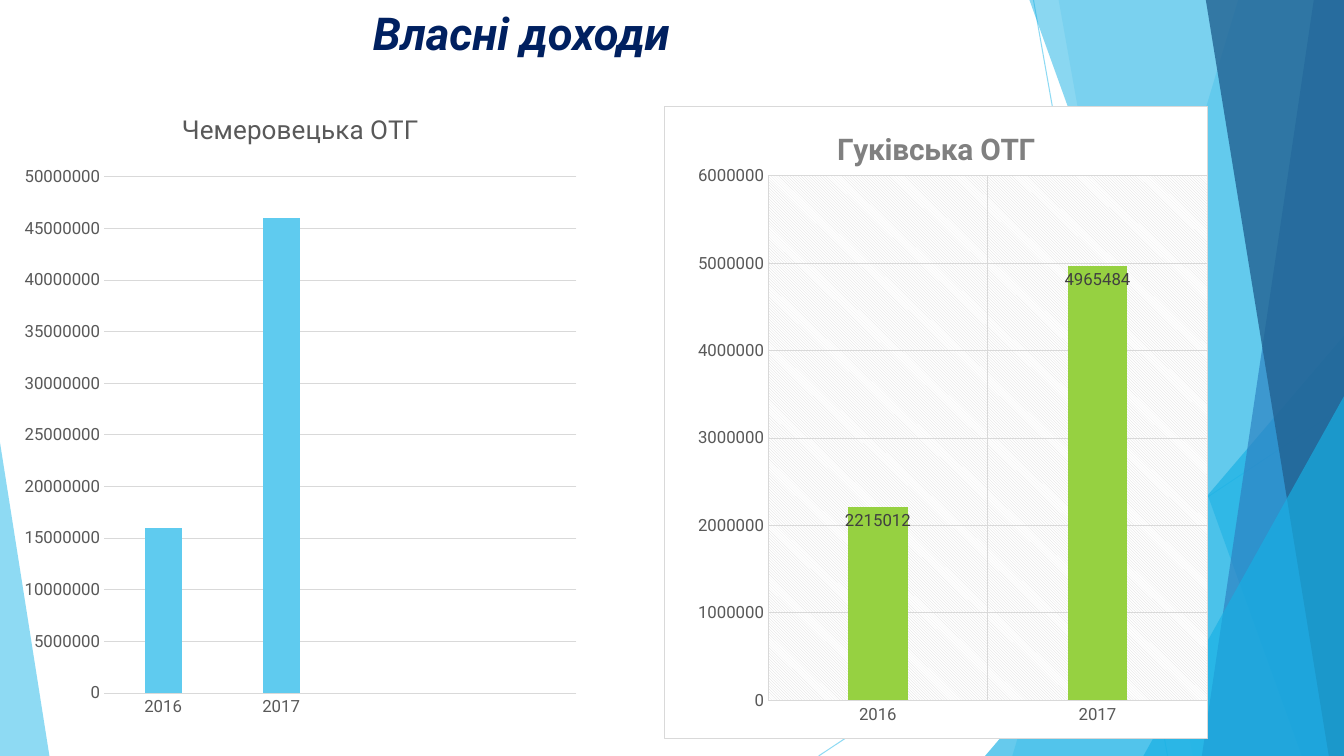
import dataclasses

import pptx
import pptx.chart.data
import pptx.dml.color
import pptx.dml.fill
import pptx.dml.line
import pptx.enum.chart
import pptx.enum.dml
import pptx.enum.shapes
import pptx.enum.text
import pptx.oxml
import pptx.oxml.ns
import pptx.util

Inches = pptx.util.Inches
Pt = pptx.util.Pt
qn = pptx.oxml.ns.qn
SLIDE_W, SLIDE_H = 13.33, 7.5


@dataclasses.dataclass(frozen=True)
class Theme:
    font: str = "Roboto"
    sky: str = "5FCBEF"
    cyan: str = "17B0E4"
    blue: str = "2E83C3"
    deep: str = "226292"
    green: str = "96D141"
    navy: str = "002060"
    axis_text: str = "595959"
    label_text: str = "404040"
    gray: str = "808080"
    grid: str = "D9D9D9"
    white: str = "FFFFFF"
    heading_pt: float = 32.4
    axis_pt: float = 12
    hairline_pt: float = 0.75


THEME = Theme()


def rgb(color):
    return pptx.dml.color.RGBColor.from_string(color)


def set_alpha(fill, percent):
    """Make a solid fill partly transparent."""
    for color in fill._xPr.iter(qn("a:srgbClr")):
        alpha = color.makeelement(qn("a:alpha"), {"val": str(percent * 1000)})
        color.append(alpha)


def style_font(font, size, color, bold=False, italic=False):
    font.name, font.size = THEME.font, Pt(size)
    font.bold, font.italic = bold, italic
    font.color.rgb = rgb(color)


def style_hairline(line):
    line.color.rgb = rgb(THEME.grid)
    line.width = Pt(THEME.hairline_pt)


def style_facet(shape, color, alpha):
    shape.shadow.inherit = False
    shape.fill.solid()
    shape.fill.fore_color.rgb = rgb(color)
    set_alpha(shape.fill, alpha)
    shape.line.fill.background()


def add_text(slide, box, text, *, size, color, bold=False, italic=False, align=None):
    frame = slide.shapes.add_textbox(*map(Inches, box)).text_frame
    frame.word_wrap = True
    frame.vertical_anchor = pptx.enum.text.MSO_ANCHOR.TOP
    paragraph = frame.paragraphs[0]
    paragraph.alignment = align
    run = paragraph.add_run()
    run.text = text
    style_font(run.font, size, color, bold, italic)


def add_ray(slide, start, end):
    ray = slide.shapes.add_connector(
        pptx.enum.shapes.MSO_CONNECTOR.STRAIGHT, *map(Inches, start + end))
    ray.line.color.rgb = rgb(THEME.sky)
    ray.line.width = Pt(THEME.hairline_pt)
    set_alpha(ray.line.fill, 70)
    properties = ray._element.spPr
    properties.append(properties.makeelement(qn("a:effectLst"), {}))


def add_band(slide, top_x, bottom_x, color, alpha):
    """Fill from a slanted left edge to the right side of the slide."""
    outline = slide.shapes.build_freeform(Inches(top_x), 0)
    corners = [(SLIDE_W, 0), (SLIDE_W, SLIDE_H), (bottom_x, SLIDE_H)]
    outline.add_line_segments([(Inches(x), Inches(y)) for x, y in corners], close=True)
    style_facet(outline.convert_to_shape(), color, alpha)


def add_corner(slide, box, apex, color, alpha):
    corner = slide.shapes.add_shape(
        pptx.enum.shapes.MSO_SHAPE.ISOSCELES_TRIANGLE, *map(Inches, box))
    corner.adjustments[0] = apex
    style_facet(corner, color, alpha)


def add_facets(slide):
    add_ray(slide, (10.25, 0), (11.58, SLIDE_H))
    add_ray(slide, (SLIDE_W, 4.03), (8.12, SLIDE_H))
    add_band(slide, 12.28, 10.04, THEME.sky, 36)
    add_band(slide, 10.5, 11.83, THEME.sky, 20)
    add_corner(slide, (9.77, 3.33, 3.56, 4.17), 1, THEME.cyan, 66)
    add_band(slide, 10.21, 12.91, THEME.cyan, 50)
    add_band(slide, 13.03, 11.92, THEME.blue, 70)
    add_band(slide, 11.96, 13.18, THEME.deep, 80)
    add_corner(slide, (11.34, 3.93, 1.99, 3.57), 1, THEME.cyan, 66)
    add_corner(slide, (0, 4.39, 0.49, 3.11), 0, THEME.sky, 70)


def add_income_chart(slide, box, community, incomes, *, color, top, step, gap,
                     overlap, title_size, title_color, title_bold=False):
    data = pptx.chart.data.CategoryChartData(number_format="General")
    data.categories = [year for year, _ in incomes]
    data.add_series(community, [income for _, income in incomes])
    chart = slide.shapes.add_chart(
        pptx.enum.chart.XL_CHART_TYPE.COLUMN_CLUSTERED, *map(Inches, box), data).chart
    chart.has_legend = False
    chart.font.name = THEME.font
    chart.has_title = True
    heading = chart.chart_title.text_frame.paragraphs[0].add_run()
    heading.text = community
    style_font(heading.font, title_size, title_color, title_bold)
    chart.chart_title.include_in_layout = False

    for axis in (chart.category_axis, chart.value_axis):
        axis.major_tick_mark = axis.minor_tick_mark = pptx.enum.chart.XL_TICK_MARK.NONE
        style_font(axis.tick_labels.font, THEME.axis_pt, THEME.axis_text)
    style_hairline(chart.category_axis.format.line)
    values = chart.value_axis
    values.minimum_scale, values.maximum_scale, values.major_unit = 0, top, step
    values.format.line.fill.background()
    style_hairline(values.major_gridlines.format.line)

    plot = chart.plots[0]
    plot.vary_by_categories = False
    plot.gap_width, plot.overlap = gap, overlap
    bars = plot.series[0].format
    bars.fill.solid()
    bars.fill.fore_color.rgb = rgb(color)
    return chart


def new_properties():
    return pptx.oxml.parse_xml(f"<c:spPr {pptx.oxml.ns.nsdecls('c', 'a')}/>")


def style_frame(chart, filled):
    """Give the chart area a white bordered panel, or nothing."""
    properties = new_properties()
    chart._chartSpace.find(qn("c:chart")).addnext(properties)
    fill = pptx.dml.fill.FillFormat.from_fill_parent(properties)
    border = pptx.dml.line.LineFormat(properties)
    if filled:
        fill.solid()
        fill.fore_color.rgb = rgb(THEME.white)
        style_hairline(border)
    else:
        fill.background()
        border.fill.background()


def hatch_plot(chart, x, y, w, h):
    """Place the inner plot by fractions of the chart and hatch it."""
    area = chart._chartSpace.find(qn("c:chart")).find(qn("c:plotArea"))
    for layout in area.findall(qn("c:layout")):
        area.remove(layout)
    marks = [("layoutTarget", "inner"), ("xMode", "edge"), ("yMode", "edge"),
             ("x", x), ("y", y), ("w", w), ("h", h)]
    items = "".join(f'<c:{name} val="{value}"/>' for name, value in marks)
    area.insert(0, pptx.oxml.parse_xml(
        f"<c:layout {pptx.oxml.ns.nsdecls('c')}>"
        f"<c:manualLayout>{items}</c:manualLayout></c:layout>"))
    properties = new_properties()
    area.append(properties)
    fill = pptx.dml.fill.FillFormat.from_fill_parent(properties)
    fill.patterned()
    fill.pattern = pptx.enum.dml.MSO_PATTERN.LIGHT_DOWNWARD_DIAGONAL
    fill.fore_color.rgb, fill.back_color.rgb = rgb(THEME.grid), rgb(THEME.white)


def label_bars(chart):
    labels = chart.plots[0].series[0].data_labels
    labels.show_value = True
    labels.position = pptx.enum.chart.XL_LABEL_POSITION.INSIDE_END
    style_font(labels.font, THEME.axis_pt, THEME.label_text)


def build_income_slide(slide):
    add_facets(slide)
    add_text(slide, (0.47, 0, 9.4, 1.44), "Власні доходи", size=THEME.heading_pt,
             color=THEME.navy, bold=True, italic=True,
             align=pptx.enum.text.PP_ALIGN.CENTER)
    chemerivtsi = add_income_chart(
        slide, (0.13, 0.89, 5.7, 6.35), "Чемеровецька ОТГ",
        [("2016", 16000000), ("2017", 46000000), ("", None), ("", None)],
        color=THEME.sky, top=50000000, step=5000000, gap=219, overlap=-27,
        title_size=18.6, title_color=THEME.axis_text)
    style_frame(chemerivtsi, filled=False)
    hukiv = add_income_chart(
        slide, (6.59, 1.05, 5.39, 6.28), "Гуківська ОТГ",
        [("2016", 2215012), ("2017", 4965484)],
        color=THEME.green, top=6000000, step=1000000, gap=267, overlap=-43,
        title_size=21.3, title_color=THEME.gray, title_bold=True)
    style_frame(hukiv, filled=True)
    style_hairline(hukiv.category_axis.major_gridlines.format.line)
    hatch_plot(hukiv, 0.19, 0.11, 0.81, 0.83)
    label_bars(hukiv)


def main():
    deck = pptx.Presentation()
    deck.slide_width, deck.slide_height = Inches(SLIDE_W), Inches(SLIDE_H)
    build_income_slide(deck.slides.add_slide(deck.slide_layouts[6]))
    deck.save("out.pptx")


if __name__ == "__main__":
    main()
